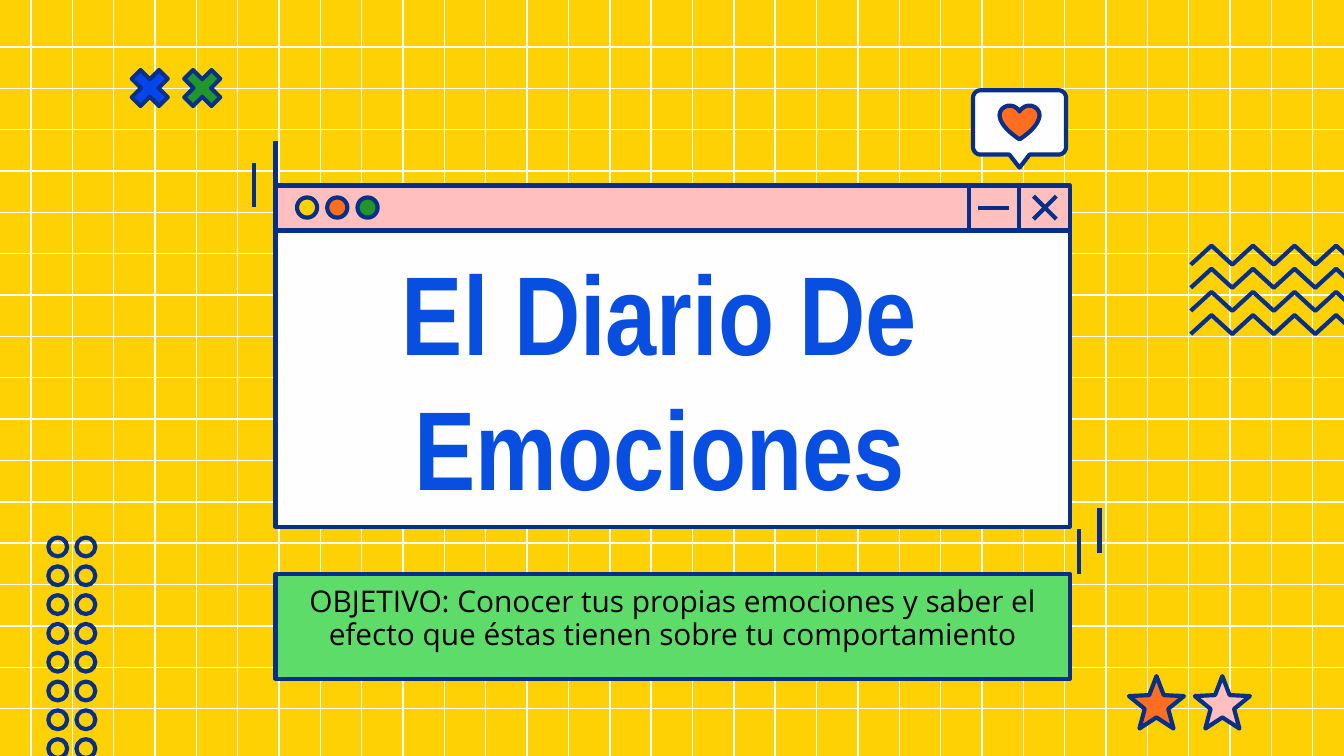
"""Build the cover slide of an emotions diary, styled as a retro browser window."""
from dataclasses import dataclass
from typing import Optional

from lxml import etree
from pptx import Presentation
from pptx import util as u
from pptx.dml.color import RGBColor
from pptx.enum import shapes, text
from pptx.oxml.ns import qn

Pt = u.Pt
Kind = shapes.MSO_SHAPE


@dataclass(frozen=True)
class Theme:
    yellow: str = "FED104"
    white: str = "FFFEFF"
    navy: str = "052F88"
    blue: str = "0546EC"
    title_blue: str = "084EE1"
    green: str = "21962B"
    lime: str = "5EDC69"
    pink: str = "FFBFBF"
    orange: str = "FE6E20"
    black: str = "000000"
    title_font: str = "Arial Narrow"
    body_font: str = "Open Sans"
    title_size: float = 60
    body_size: float = 16
    grid_line: float = 0.75
    outline: float = 2.25


@dataclass(frozen=True)
class Box:
    x: float
    y: float
    w: float
    h: float
    kind: int = Kind.RECTANGLE
    fill: Optional[str] = None
    adj: tuple = ()


@dataclass(frozen=True)
class Stroke:
    x1: float
    y1: float
    x2: float
    y2: float


@dataclass(frozen=True)
class Words:
    value: str
    font: str
    size: float
    color: str
    anchor: int
    bold: bool = False
    spacing: float = 1.0
    right: float = 7.2


T = Theme()
W, H = 720, 405
WIN_X, WIN_W = 147.6, 425.5


def rgb(code: str) -> RGBColor:
    return RGBColor.from_string(code)


def finish(sp, fill: Optional[str]) -> None:
    sp.shadow.inherit = False
    if fill:
        sp.fill.solid()
        sp.fill.fore_color.rgb = rgb(fill)
    else:
        sp.fill.background()
    sp.line.color.rgb = rgb(T.navy)
    sp.line.width = Pt(T.outline)


def draw_box(s, b: Box):
    sp = s.shapes.add_shape(b.kind, Pt(b.x), Pt(b.y), Pt(b.w), Pt(b.h))
    for i, value in enumerate(b.adj):
        sp.adjustments[i] = value
    finish(sp, b.fill)
    return sp


def draw_stroke(s, k: Stroke, color: str = T.navy, width: float = T.outline) -> None:
    ln = s.shapes.add_connector(shapes.MSO_CONNECTOR.STRAIGHT,
                                Pt(k.x1), Pt(k.y1), Pt(k.x2), Pt(k.y2))
    ln.line.color.rgb = rgb(color)
    ln.line.width = Pt(width)
    etree.SubElement(ln._element.spPr, qn("a:effectLst"))


def flatten(path: list, steps: int = 8) -> list:
    """Turn a path of points and cubic curves into plain points."""
    pts = [path[0]]
    for seg in path[1:]:
        if len(seg) == 2:
            pts.append(seg)
            continue
        ctrl = [pts[-1], seg[:2], seg[2:4], seg[4:]]
        for i in range(1, steps + 1):
            t = i / steps
            weights = ((1 - t) ** 3, 3 * t * (1 - t) ** 2, 3 * t * t * (1 - t), t ** 3)
            pts.append(tuple(sum(k * c[a] for k, c in zip(weights, ctrl)) for a in (0, 1)))
    return pts


def draw_path(s, path: list, fill: Optional[str] = None, close: bool = True) -> None:
    pts = [(Pt(x), Pt(y)) for x, y in flatten(path)]
    fb = s.shapes.build_freeform(*pts[0])
    fb.add_line_segments(pts[1:], close=close)
    finish(fb.convert_to_shape(), fill)


def write(sp, words: Words) -> None:
    tf = sp.text_frame
    tf.word_wrap = True
    tf.vertical_anchor = words.anchor
    tf.margin_left = tf.margin_top = tf.margin_bottom = Pt(7.2)
    tf.margin_right = Pt(words.right)
    p = tf.paragraphs[0]
    p.alignment = text.PP_ALIGN.CENTER
    p.line_spacing = words.spacing
    r = p.add_run()
    r.text = words.value
    r.font.name, r.font.size, r.font.bold = words.font, Pt(words.size), words.bold
    r.font.color.rgb = rgb(words.color)


def draw_background(s) -> None:
    s.background.fill.solid()
    s.background.fill.fore_color.rgb = rgb(T.yellow)
    step = 22.15
    columns = [Stroke(16.6 + i * step, 0, 16.6 + i * step, H) for i in range(32)]
    rows = [Stroke(0, 25.2 + i * step, W, 25.2 + i * step) for i in range(17)]
    for k in columns + rows:
        draw_stroke(s, k, T.white, T.grid_line)


def draw_ornaments(s) -> None:
    for row in range(4):
        base = 141.8 + row * 12.4
        draw_path(s, [(637.9 + i * 11.12, base - 10.2 * (i % 2)) for i in range(17)],
                  close=False)
    for x, fill in ((66.2, T.blue), (94.3, T.green)):
        draw_box(s, Box(x, 33.1, 28.1, 28.1, Kind.MATH_MULTIPLY, fill, (0.235,)))
    for x in (25.9, 41):
        for row in range(8):
            draw_box(s, Box(x, 288 + row * 15.43, 10.1, 10.1, Kind.OVAL))
    for x, fill in ((604.8, T.orange), (640.1, T.pink)):
        draw_box(s, Box(x, 362.2, 29.5, 28.1, Kind.STAR_5_POINT, fill, (0.213, 1.051, 1.106)))


def draw_window(s) -> None:
    title = draw_box(s, Box(WIN_X, 123.1, WIN_W, 159.1, fill=T.white))
    write(title, Words("El Diario De Emociones", T.title_font, T.title_size, T.title_blue,
                       text.MSO_ANCHOR.MIDDLE, bold=True, right=21))
    goal = draw_box(s, Box(WIN_X, 307.4, WIN_W, 56.2, fill=T.lime))
    write(goal, Words("OBJETIVO: Conocer tus propias emociones y saber el efecto que éstas "
                      "tienen sobre tu comportamiento", T.body_font, T.body_size, T.black,
                      text.MSO_ANCHOR.TOP, spacing=0.9))
    draw_box(s, Box(WIN_X, 99.4, WIN_W, 24.1, fill=T.pink))
    for x, y in ((136.1, 87.1), (WIN_X, 75.8), (589, 272.3), (578, 283.6)):
        draw_stroke(s, Stroke(x, y, x, y + 24))
    for k in (Stroke(545.8, 99.4, 545.8, 123.1), Stroke(519.1, 99.4, 519.1, 123.1),
              Stroke(524.2, 111.6, 540.7, 111.6),
              Stroke(553.7, 117.4, 565.9, 105.1), Stroke(553.7, 105.1, 565.9, 117.4)):
        draw_stroke(s, k)
    for i, fill in enumerate((T.yellow, T.orange, T.green)):
        draw_box(s, Box(159.1 + i * 16.2, 105.8, 10.8, 10.8, Kind.OVAL, fill))


def draw_like_bubble(s) -> None:
    draw_path(s, [(521.3, 52.3), (521.3, 78.8), (521.3, 81, 523.1, 82.8, 525.2, 82.8),
                  (540.7, 82.8), (546.2, 89.8), (551.6, 82.8),
                  (567.2, 82.8), (569.3, 82.8, 571.1, 81, 571.1, 78.8),
                  (571.1, 52.3), (571.1, 50.2, 569.3, 48.4, 567.2, 48.4),
                  (525.2, 48.4), (523.1, 48.4, 521.3, 50.2, 521.3, 52.3)], T.white)
    draw_path(s, [(547.3, 58.3), (546.8, 58.8, 546.4, 59.3, 546.2, 59.8),
                  (546, 59.3, 545.6, 58.8, 545.1, 58.3),
                  (540.8, 54, 533.4, 58.3, 536, 64.1),
                  (537.1, 67, 540, 70.6, 546.2, 74.7),
                  (552.4, 70.6, 555.3, 67, 556.4, 64.1),
                  (559, 58.3, 551.6, 54, 547.3, 58.3)], T.orange)


def main() -> None:
    prs = Presentation()
    prs.slide_width, prs.slide_height = Pt(W), Pt(H)
    s = prs.slides.add_slide(prs.slide_layouts[6])
    draw_background(s)
    draw_ornaments(s)
    draw_window(s)
    draw_like_bubble(s)
    prs.save("out.pptx")


if __name__ == "__main__":
    main()
